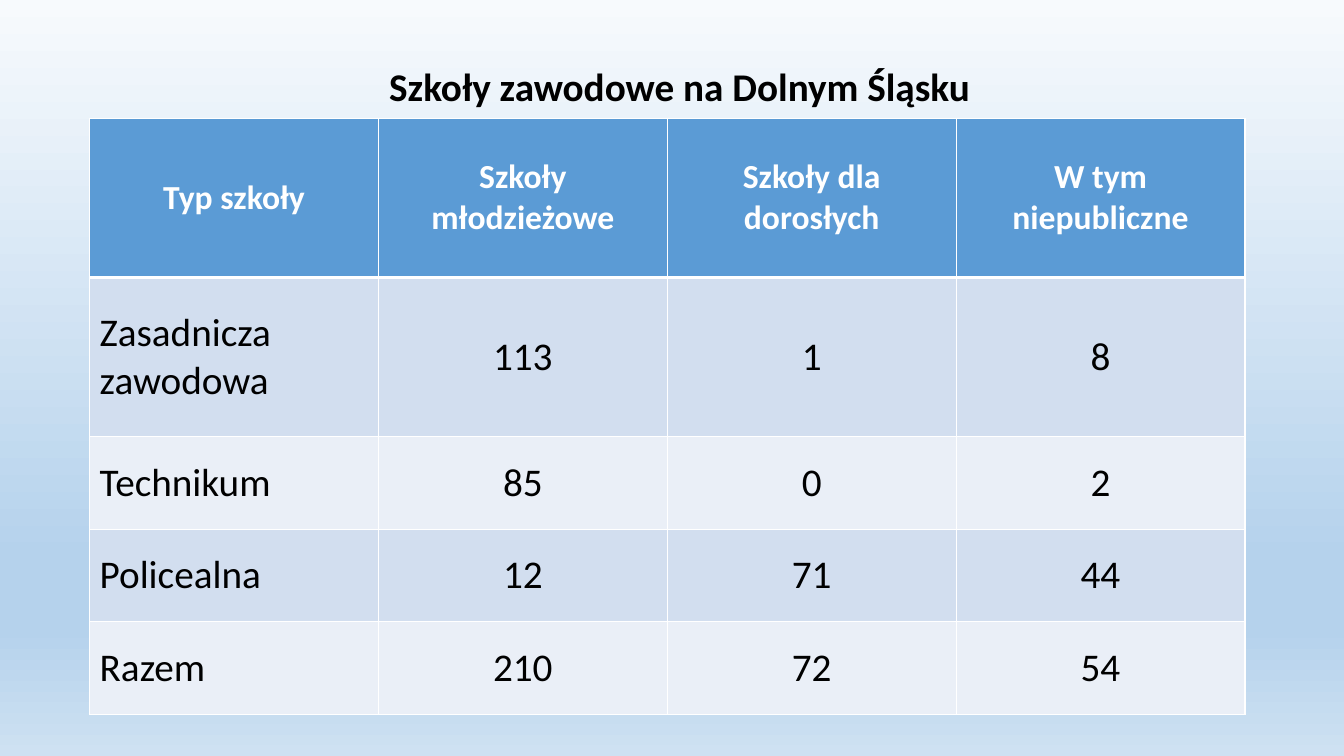
from copy import deepcopy

from lxml import etree
from pptx import Presentation
from pptx import util as u
from pptx.dml.color import RGBColor
from pptx.enum import text
from pptx.oxml import ns

BLACK = RGBColor(0x00, 0x00, 0x00)
WHITE = RGBColor(0xFF, 0xFF, 0xFF)
HEADER_BLUE = RGBColor(0x5B, 0x9B, 0xD5)
BANDS = (RGBColor(0xD2, 0xDE, 0xEF), RGBColor(0xEA, 0xEF, 0xF7))
SKY = (
    (0, RGBColor(0xF7, 0xFA, 0xFD)),
    (0.74, RGBColor(0xB5, 0xD2, 0xEC)),
    (0.83, RGBColor(0xB5, 0xD2, 0xEC)),
    (1, RGBColor(0xCE, 0xE1, 0xF2)),
)

SCHOOLS = (
    ("Typ szkoły", "Szkoły młodzieżowe", "Szkoły dla dorosłych", "W tym niepubliczne"),
    ("Zasadnicza zawodowa", "113", "1", "8"),
    ("Technikum", "85", "0", "2"),
    ("Policealna", "12", "71", "44"),
    ("Razem", "210", "72", "54"),
)


class SlideBuilder:
    """Places styled elements on a grid of 100 columns by 100 rows."""

    font_name = "Calibri"
    large, medium = u.Pt(28), u.Pt(24)

    def __init__(self, deck):
        self.column = deck.slide_width / 100
        self.row = deck.slide_height / 100
        self.slide = deck.slides.add_slide(deck.slide_layouts[0])
        subtitle = self.slide.placeholders[1].element
        subtitle.getparent().remove(subtitle)

    def x(self, columns):
        return round(columns * self.column)

    def y(self, rows):
        return round(rows * self.row)

    def style(self, paragraph, size, color, bold, align):
        paragraph.alignment = align
        font = paragraph.font
        font.name, font.size, font.bold = self.font_name, size, bold
        font.color.rgb = color

    def background(self, stops):
        fill = self.slide.background.fill
        fill.gradient()
        fill.gradient_angle = 270
        stop_list = self.slide.element.find(".//" + ns.qn("a:gsLst"))
        while len(stop_list) < len(stops):
            stop_list.append(deepcopy(stop_list[0]))
        for stop, (position, color) in zip(fill.gradient_stops, stops):
            stop.position = position
            stop.color.rgb = color

    def title(self, wording, left, top, width, height):
        heading = self.slide.shapes.title
        heading.left, heading.top = self.x(left), self.y(top)
        heading.width, heading.height = self.x(width), self.y(height)
        frame = heading.text_frame
        frame.text = wording
        frame.word_wrap = True
        frame.auto_size = text.MSO_AUTO_SIZE.NONE
        frame.vertical_anchor = text.MSO_ANCHOR.BOTTOM
        frame.paragraphs[0].line_spacing = 0.9
        self.style(frame.paragraphs[0], self.large, BLACK, True, text.PP_ALIGN.CENTER)

    def borders(self, cell, **widths):
        properties = cell._tc.get_or_add_tcPr()
        for side in "LRTB":
            line = etree.SubElement(properties, ns.qn(f"a:ln{side}"),
                                    w=str(u.Pt(widths.get(side, 1))))
            solid = etree.SubElement(line, ns.qn("a:solidFill"))
            etree.SubElement(solid, ns.qn("a:srgbClr"), val=str(WHITE))

    def table(self, rows, left, top, column_width, row_heights):
        count = len(rows[0])
        grid = self.slide.shapes.add_table(
            len(rows), count, self.x(left), self.y(top),
            self.x(column_width * count), self.y(sum(row_heights))).table
        for grid_column in grid.columns:
            grid_column.width = self.x(column_width)
        for r, (values, height) in enumerate(zip(rows, row_heights)):
            grid.rows[r].height = self.y(height)
            for c, value in enumerate(values):
                self.cell(grid.cell(r, c), value, r, c)

    def cell(self, cell, value, r, c):
        header = r == 0
        cell.text = value
        cell.vertical_anchor = text.MSO_ANCHOR.MIDDLE
        # A thicker rule separates the header from the body
        self.borders(cell, T=3 if r == 1 else 1, B=3 if header else 1)
        cell.fill.solid()
        cell.fill.fore_color.rgb = HEADER_BLUE if header else BANDS[(r - 1) % 2]
        school_name = c == 0 and not header
        self.style(cell.text_frame.paragraphs[0],
                   self.medium if header else self.large,
                   WHITE if header else BLACK, header,
                   text.PP_ALIGN.LEFT if school_name else text.PP_ALIGN.CENTER)


def main():
    deck = Presentation()
    deck.slide_width, deck.slide_height = u.Inches(13.33), u.Inches(7.5)
    page = SlideBuilder(deck)

    # Sky gradient
    page.background(SKY)

    # Heading
    page.title("Szkoły zawodowe na Dolnym Śląsku", 13.05, 7.6, 75, 7.6)

    # Numbers of schools by type
    page.table(SCHOOLS, left=6.67, top=15.65, column_width=21.49,
               row_heights=(21.05, 21.05, 12.25, 12.25, 12.25))

    deck.save("out.pptx")


if __name__ == "__main__":
    main()
